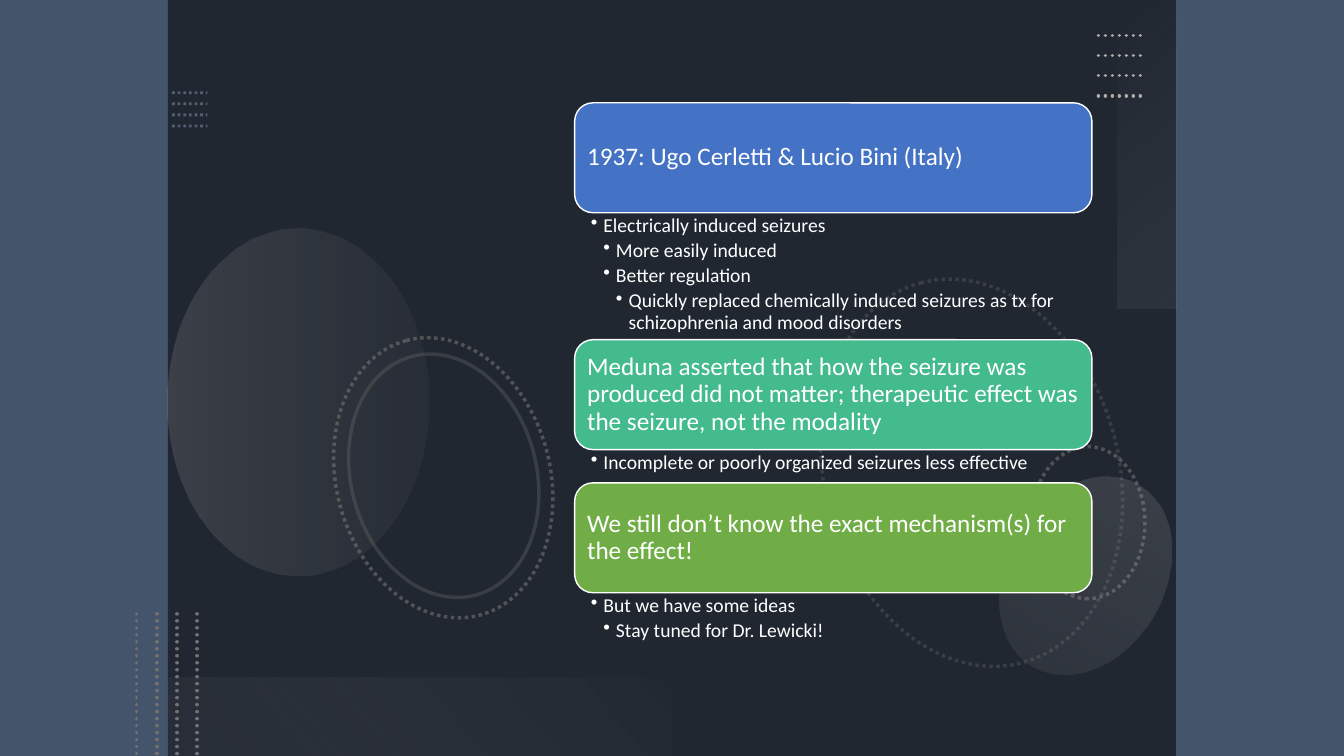
import pptx
import pptx.util
import pptx.dml.color
import pptx.enum.dml
import pptx.enum.shapes
import pptx.enum.text
import pptx.oxml.ns
from lxml import etree

Inches, Pt = pptx.util.Inches, pptx.util.Pt
RGBColor = pptx.dml.color.RGBColor
SHAPES = pptx.enum.shapes.MSO_SHAPE
qn = pptx.oxml.ns.qn

SLATE = RGBColor(0x44, 0x54, 0x6A)
BLACK = RGBColor(0, 0, 0)
WHITE = RGBColor(0xFF, 0xFF, 0xFF)
STEEL = RGBColor(0x84, 0x97, 0xB0)
GRAY = RGBColor(0x76, 0x71, 0x71)
SILVER = RGBColor(0xAF, 0xAB, 0xAB)
PALE = RGBColor(0xF5, 0xF5, 0xF5)
MIST = RGBColor(0xF1, 0xF0, 0xF0)
BLUE = RGBColor(0x44, 0x72, 0xC4)
TEAL = RGBColor(0x43, 0xBB, 0x8D)
GREEN = RGBColor(0x70, 0xAD, 0x47)

WIDTH, HEIGHT = 13.33, 7.5
CARD_HEIGHT = 1.09
BULLET_STEP = 0.125

# Heading, colour, height of the bullet area, bullets as (level, text)
TOPICS = [
    ("1937: Ugo Cerletti & Lucio Bini (Italy)", BLUE, 1.26, [
        (1, "Electrically induced seizures"),
        (2, "More easily induced"),
        (2, "Better regulation"),
        (3, "Quickly replaced chemically induced seizures as tx for "
            "schizophrenia and mood disorders")]),
    ("Meduna asserted that how the seizure was produced did not matter; "
     "therapeutic effect was the seizure, not the modality", TEAL, 0.33, [
        (1, "Incomplete or poorly organized seizures less effective")]),
    ("We still don’t know the exact mechanism(s) for the effect!", GREEN, 0.53, [
        (1, "But we have some ideas"),
        (2, "Stay tuned for Dr. Lewicki!")]),
]


def set_opacity(parent, percent):
    """Give the colours inside an XML element an opacity."""
    for color in parent.iter(qn("a:srgbClr")):
        etree.SubElement(color, qn("a:alpha")).set("val", str(percent * 1000))


def add_plain_shape(slide, kind, box, rotation=0):
    shape = slide.shapes.add_shape(kind, *map(Inches, box))
    shape.shadow.inherit = False
    shape.rotation = rotation
    shape.line.fill.background()
    return shape


def style_line(shape, color, width, opacity=100, dotted=True, round_cap=False):
    shape.line.color.rgb = color
    shape.line.width = Pt(width)
    if dotted:
        shape.line.dash_style = pptx.enum.dml.MSO_LINE.ROUND_DOT
    outline = shape._element.spPr.find(qn("a:ln"))
    if round_cap:
        outline.set("cap", "rnd")
    if opacity < 100:
        set_opacity(outline, opacity)


def add_gradient_shape(slide, kind, box, rotation, angle, stops):
    shape = add_plain_shape(slide, kind, box, rotation)
    shape.fill.gradient()
    shape.fill.gradient_angle = 360 - angle
    for stop, (position, color, opacity) in zip(shape.fill.gradient_stops, stops):
        stop.position = position
        stop.color.rgb = color
        set_opacity(stop._gs, opacity)


def add_ring(slide, box, rotation, opacity, dotted=True):
    ring = add_plain_shape(slide, SHAPES.OVAL, box, rotation)
    ring.fill.background()
    style_line(ring, GRAY, 2.5, opacity, dotted)


def add_dot_lines(slide, box, color, width, opacity=100, vertical=False, round_cap=True):
    """Four evenly spaced dotted lines that fill the box."""
    left, top, box_width, box_height = box
    for index in range(4):
        share = index / 3
        if vertical:
            x = left + box_width * share
            ends = (x, top, x, top + box_height)
        else:
            y = top + box_height * share
            ends = (left, y, left + box_width, y)
        line = slide.shapes.add_connector(
            pptx.enum.shapes.MSO_CONNECTOR.STRAIGHT, *map(Inches, ends))
        style_line(line, color, width, opacity, round_cap=round_cap)
        etree.SubElement(line._element.spPr, qn("a:effectLst"))


def add_backdrop(slide, box):
    """Dark panel with its rings, discs, bands and dotted lines."""
    left, top, width, height = box
    right, bottom = left + width, top + height

    panel = add_plain_shape(slide, SHAPES.RECTANGLE, box)
    panel.fill.solid()
    panel.fill.fore_color.rgb = BLACK
    set_opacity(panel._element.spPr, 53)
    add_dot_lines(slide, (left + 0.04, top + 0.92, 0.35, 0.33), STEEL, 2, 50,
                  round_cap=False)

    # Rings and discs
    add_ring(slide, (left + 6.02, top + 3.23, 3.9, 2.92), 75, 30)
    add_ring(slide, (left + 8.37, top + 4.62, 1.51, 1.13), 270, 60)
    add_gradient_shape(slide, SHAPES.OVAL, (left - 0.43, top + 2.7, 3.44, 2.58),
                       270, 90, [(0, SILVER, 20), (1, GRAY, 10)])
    add_gradient_shape(slide, SHAPES.OVAL, (left + 8.32, top + 4.67, 1.56, 2.08),
                       210, 90, [(0, SILVER, 10), (1, SILVER, 20)])
    add_ring(slide, (left + 1.32, top + 3.68, 2.82, 2.12), 75, 60)
    add_ring(slide, (left + 1.51, top + 3.8, 2.45, 1.84), 75, 30, dotted=False)

    # Corner bands and dots
    add_gradient_shape(slide, SHAPES.RECTANGLE, (right - 1.82, top + 1.24, 3.06, 0.58),
                       270, 140, [(0, PALE, 0), (1, SILVER, 10)])
    add_dot_lines(slide, (right - 0.77, top + 0.35, 0.45, 0.6), SILVER, 2.5)
    add_gradient_shape(slide, SHAPES.RECTANGLE, (left, bottom - 0.78, width / 2, 0.78),
                       180, 140, [(0.1, GRAY, 10), (1, MIST, 0)])
    add_dot_lines(slide, (left - 0.31, bottom - 1.41, 0.6, 1.41), GRAY, 2.5,
                  vertical=True)


def set_margins(text_frame, left, top, right, bottom):
    text_frame.word_wrap = True
    text_frame.margin_left, text_frame.margin_top = Inches(left), Inches(top)
    text_frame.margin_right, text_frame.margin_bottom = Inches(right), Inches(bottom)


def format_paragraph(paragraph, size, after):
    paragraph.alignment = pptx.enum.text.PP_ALIGN.LEFT
    paragraph.line_spacing = 0.9
    paragraph.space_after = Pt(after)
    font = paragraph.runs[0].font
    font.name, font.size = "Calibri", Pt(size)
    font.color.rgb = WHITE


def add_card(slide, box, heading, color):
    card = add_plain_shape(slide, SHAPES.ROUNDED_RECTANGLE, box)
    card.fill.solid()
    card.fill.fore_color.rgb = color
    style_line(card, WHITE, 1, dotted=False)
    card.text_frame.text = heading
    set_margins(card.text_frame, 0.07, 0.07, 0.07, 0.07)
    card.text_frame.vertical_anchor = pptx.enum.text.MSO_ANCHOR.MIDDLE
    format_paragraph(card.text_frame.paragraphs[0], 18, 6.3)


def add_bullets(slide, box, bullets):
    text_frame = slide.shapes.add_textbox(*map(Inches, box)).text_frame
    text_frame.text = "\n".join(text for level, text in bullets)
    set_margins(text_frame, 0.16, 0.03, 0.14, 0.03)
    for paragraph, (level, text) in zip(text_frame.paragraphs, bullets):
        paragraph.level = level
        format_paragraph(paragraph, 14, 2.8)
        properties = paragraph._p.get_or_add_pPr()
        properties.set("marL", str(Inches(BULLET_STEP * level)))
        properties.set("indent", str(-Inches(BULLET_STEP)))
        etree.SubElement(properties, qn("a:buChar")).set("char", "•")


def add_topics(slide, box):
    """Stack the cards, each followed by its bullets."""
    left, top, width = box
    for heading, color, bullet_height, bullets in TOPICS:
        add_card(slide, (left, top, width, CARD_HEIGHT), heading, color)
        top += CARD_HEIGHT
        add_bullets(slide, (left, top, width, bullet_height), bullets)
        top += bullet_height


def main():
    presentation = pptx.Presentation()
    presentation.slide_width = Inches(WIDTH)
    presentation.slide_height = Inches(HEIGHT)
    slide = presentation.slides.add_slide(presentation.slide_layouts[6])
    slide.background.fill.solid()
    slide.background.fill.fore_color.rgb = SLATE
    add_backdrop(slide, (WIDTH / 8, 0, WIDTH * 3 / 4, HEIGHT))
    add_topics(slide, (5.7, 1.02, 5.13))
    presentation.save("out.pptx")


if __name__ == "__main__":
    main()
